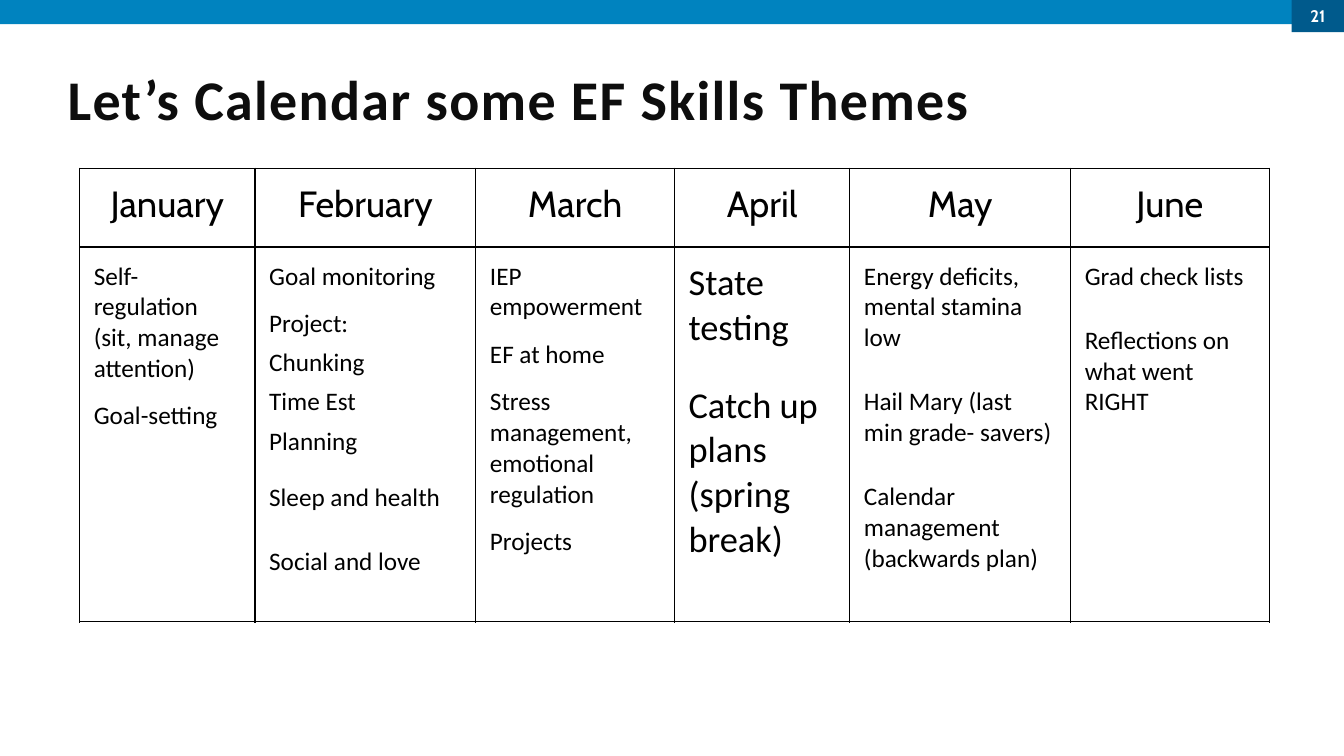
from lxml import etree
from pptx import Presentation
from pptx import util as u
from pptx.dml.color import RGBColor
from pptx.enum import shapes, text
from pptx.oxml.ns import qn

COLORS = {"bar": "0083BF", "badge": "005A8C", "title": "0D0D0D",
          "ink": "000000", "paper": "FFFFFF"}
HEADING_FONT, BODY_FONT = "Cabin", "Calibri"

MONTHS = ["January", "February", "March", "April", "May", "June"]
COLUMN_WIDTHS = [1.74, 2.19, 1.97] * 2
ROW_HEIGHTS = [0.78, 3.72]

TIGHT, STEP, WIDE = (6, 6), (0, 6), (12, 12)
THEMES = [
    (18, [("Self-regulation (sit, manage attention)", TIGHT),
          ("Goal-setting", TIGHT)]),
    (18, [("Goal monitoring", WIDE),
          ("Project:", STEP),
          ("Chunking", STEP),
          ("Time Est", STEP),
          ("Planning", STEP),
          ("Sleep and health", WIDE),
          ("Social and love", WIDE)]),
    (18, [("IEP empowerment", TIGHT),
          ("EF at home", TIGHT),
          ("Stress management, emotional regulation", TIGHT),
          ("Projects", TIGHT)]),
    (26, [("State testing", WIDE),
          ("Catch up plans (spring break)", WIDE)]),
    (18, [("Energy deficits, mental stamina low", WIDE),
          ("Hail Mary (last min grade- savers)", WIDE),
          ("Calendar management (backwards plan)", WIDE)]),
    (18, [("Grad check lists", WIDE),
          ("Reflections on what went RIGHT", WIDE)]),
]


class SlideBuilder:
    def __init__(self, slide):
        self.slide = slide

    def color(self, name):
        return RGBColor.from_string(COLORS[name])

    def run(self, paragraph, words, size, font, color, bold=False):
        run = paragraph.add_run()
        run.text = words
        run.font.size = u.Pt(size)
        run.font.name = font
        run.font.bold = bold
        run.font.color.rgb = self.color(color)
        return run

    def rectangle(self, left, top, width, height, color):
        shape = self.slide.shapes.add_shape(
            shapes.MSO_SHAPE.RECTANGLE, u.Inches(left), u.Inches(top),
            u.Inches(width), u.Inches(height))
        shape.shadow.inherit = False
        shape.fill.solid()
        shape.fill.fore_color.rgb = self.color(color)
        shape.line.fill.background()
        return shape

    def badge(self, left, top, width, height, words):
        frame = self.rectangle(left, top, width, height, "badge").text_frame
        frame.margin_left = frame.margin_right = 0
        frame.vertical_anchor = text.MSO_ANCHOR.MIDDLE
        paragraph = frame.paragraphs[0]
        paragraph.alignment = text.PP_ALIGN.CENTER
        self.run(paragraph, words, 12, HEADING_FONT, "paper", bold=True)

    def title(self, left, top, width, height, words):
        frame = self.slide.shapes.add_textbox(
            u.Inches(left), u.Inches(top),
            u.Inches(width), u.Inches(height)).text_frame
        frame.word_wrap = True
        frame.margin_left = frame.margin_right = 0
        frame.margin_top = frame.margin_bottom = 0
        frame.vertical_anchor = text.MSO_ANCHOR.MIDDLE
        paragraph = frame.paragraphs[0]
        paragraph.line_spacing = 0.8
        run = self.run(paragraph, words, 40, BODY_FONT, "title", bold=True)
        run.font._element.set("spc", "100")

    def table(self, left, top, widths, heights):
        table = self.slide.shapes.add_table(
            len(heights), len(widths), u.Inches(left), u.Inches(top),
            u.Inches(sum(widths)), u.Inches(sum(heights))).table
        table.first_row = table.horz_banding = False
        for column, width in zip(table.columns, widths):
            column.width = u.Inches(width)
        for row, height in zip(table.rows, heights):
            row.height = u.Inches(height)
        for cell in table.iter_cells():
            self.style_cell(cell)
        return table

    def style_cell(self, cell):
        cell.margin_left = cell.margin_right = u.Inches(0.14)
        cell.margin_top = cell.margin_bottom = u.Inches(0.14)
        properties = cell._tc.get_or_add_tcPr()
        for side in ("a:lnL", "a:lnR", "a:lnT", "a:lnB"):
            line = etree.SubElement(properties, qn(side), w=str(u.Pt(1)))
            fill = etree.SubElement(line, qn("a:solidFill"))
            etree.SubElement(fill, qn("a:srgbClr"), val=COLORS["ink"])
        cell.fill.background()

    def month_cell(self, cell, month):
        paragraph = cell.text_frame.paragraphs[0]
        paragraph.alignment = text.PP_ALIGN.CENTER
        self.run(paragraph, month, 26, HEADING_FONT, "ink")

    def theme_cell(self, cell, size, themes):
        frame = cell.text_frame
        for index, (words, (before, after)) in enumerate(themes):
            paragraph = frame.add_paragraph() if index else frame.paragraphs[0]
            paragraph.space_before = u.Pt(before)
            paragraph.space_after = u.Pt(after)
            self.run(paragraph, words, size, BODY_FONT, "ink")


def main():
    presentation = Presentation()
    presentation.slide_width = u.Inches(13.33)
    presentation.slide_height = u.Inches(7.5)
    slide = presentation.slides.add_slide(presentation.slide_layouts[6])
    builder = SlideBuilder(slide)

    builder.rectangle(0, 0, 13.33, 0.24, "bar")
    builder.title(0.67, 0.65, 12.01, 0.77, "Let’s Calendar some EF Skills Themes")
    calendar = builder.table(0.79, 1.67, COLUMN_WIDTHS, ROW_HEIGHTS)
    for column, (month, (size, themes)) in enumerate(zip(MONTHS, THEMES)):
        builder.month_cell(calendar.cell(0, column), month)
        builder.theme_cell(calendar.cell(1, column), size, themes)
    builder.badge(12.81, -0.01, 0.52, 0.33, "21")

    presentation.save("out.pptx")


if __name__ == "__main__":
    main()
